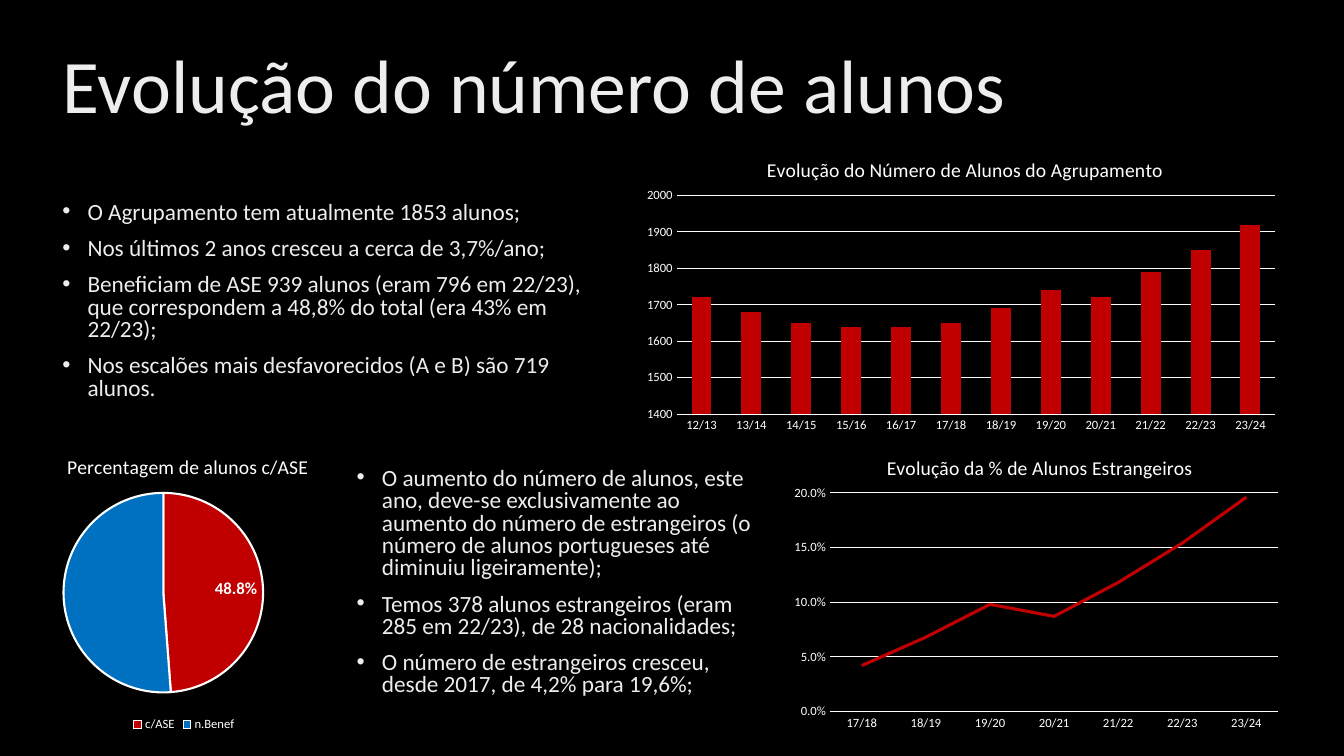
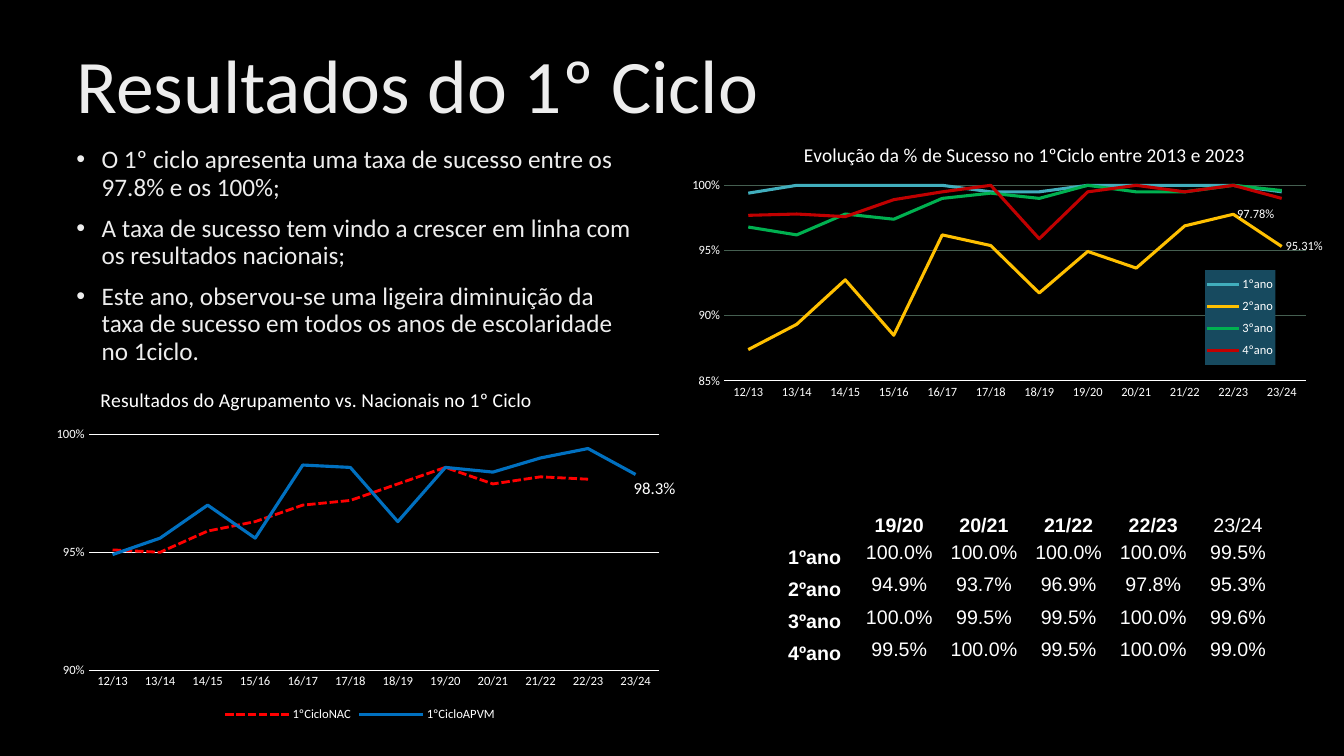
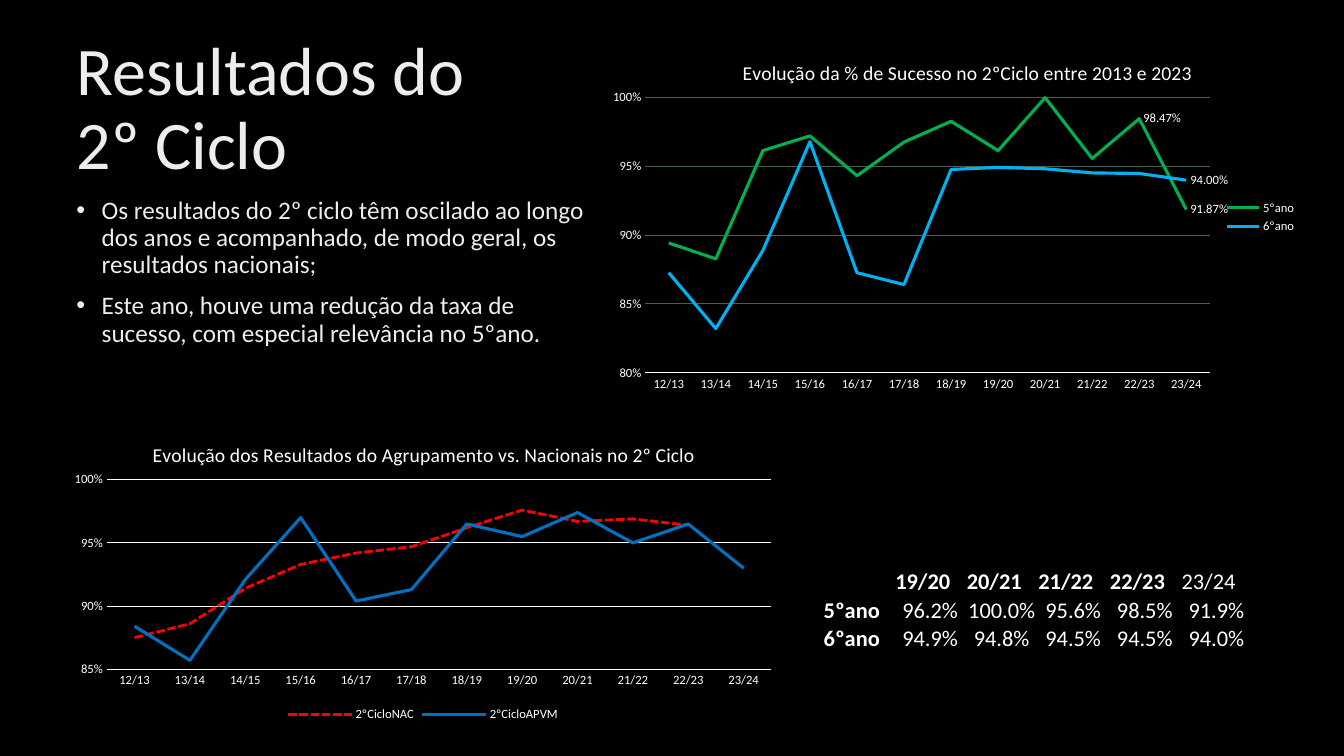
import pptx
import pptx.chart.data
import pptx.dml.color
import pptx.enum.chart
import pptx.enum.dml
import pptx.enum.text
import pptx.oxml
import pptx.oxml.ns
import pptx.util

Inches = pptx.util.Inches
Pt = pptx.util.Pt
RGBColor = pptx.dml.color.RGBColor
ChartType = pptx.enum.chart.XL_CHART_TYPE
LegendSide = pptx.enum.chart.XL_LEGEND_POSITION
LabelSide = pptx.enum.chart.XL_LABEL_POSITION
Anchor = pptx.enum.text.MSO_ANCHOR
Align = pptx.enum.text.PP_ALIGN
qn = pptx.oxml.ns.qn

BLACK = RGBColor(0x00, 0x00, 0x00)
WHITE = RGBColor(0xFF, 0xFF, 0xFF)
SILVER = RGBColor(0xED, 0xED, 0xED)
CRIMSON = RGBColor(0xC0, 0x00, 0x00)
RED = RGBColor(0xFF, 0x00, 0x00)
BLUE = RGBColor(0x00, 0x70, 0xC0)
SKY = RGBColor(0x00, 0xB0, 0xF0)
TEAL = RGBColor(0x41, 0xAE, 0xBD)
AMBER = RGBColor(0xFF, 0xC0, 0x00)
GREEN = RGBColor(0x00, 0xB0, 0x50)
MOSS = RGBColor(0x45, 0x5F, 0x51)
PETROL = RGBColor(0x17, 0x4A, 0x5F)

FONT = "Calibri"
NO_TABLE_STYLE = "{2D5ABB26-0587-4C30-8999-92F81FD0307C}"
YEARS = [f"{year}/{year + 1}" for year in range(12, 24)]


def style_font(font, size, color=WHITE, bold=False, name=FONT):
    font.size = Pt(size)
    font.name = name
    font.bold = bold
    font.color.rgb = color


def chart_xml(tag, attributes="", content=""):
    namespaces = pptx.oxml.ns.nsdecls("c", "a")
    return pptx.oxml.parse_xml(f"<c:{tag} {namespaces} {attributes}>{content}</c:{tag}>")


def add_slide(prs, title, box, size):
    slide = prs.slides.add_slide(prs.slide_layouts[5])
    heading = slide.shapes.title
    heading.left, heading.top, heading.width, heading.height = map(Inches, box)
    frame = heading.text_frame
    frame.text = title
    frame.word_wrap = True
    frame.auto_size = pptx.enum.text.MSO_AUTO_SIZE.NONE
    frame.vertical_anchor = Anchor.MIDDLE
    paragraph = frame.paragraphs[0]
    paragraph.alignment = Align.LEFT
    paragraph.line_spacing = 0.9
    style_font(paragraph.runs[0].font, size, SILVER)
    return slide


def add_bullets(slide, box, lines, size, spacing):
    frame = slide.shapes.add_textbox(*map(Inches, box)).text_frame
    frame.word_wrap = True
    frame.text = "\n".join(lines)
    for number, paragraph in enumerate(frame.paragraphs):
        properties = paragraph._p.get_or_add_pPr()
        properties.set("marL", str(Inches(0.25)))
        properties.set("indent", str(Inches(-0.25)))
        for tag, attribute, value in (("buFont", "typeface", "Arial"), ("buChar", "char", "•")):
            bullet = properties.makeelement(qn(f"a:{tag}"), {attribute: value})
            properties.append(bullet)
        paragraph.line_spacing = spacing
        if number:
            paragraph.space_before = Pt(10)
        style_font(paragraph.runs[0].font, size, SILVER)


def set_layout(parent, index, values, mode="", target=""):
    old = parent.find(qn("c:layout"))
    if old is not None:
        parent.remove(old)
    content = f'<c:layoutTarget val="{target}"/>' if target else ""
    if mode:
        content += f'<c:xMode val="{mode}"/><c:yMode val="{mode}"/>'
    content += "".join(f'<c:{key} val="{value:.4f}"/>' for key, value in zip("xywh", values))
    parent.insert(index, chart_xml("layout", "", f"<c:manualLayout>{content}</c:manualLayout>"))


def within(frame, box):
    left, top, width, height = frame
    parts = [(box[0] - left) / width, (box[1] - top) / height]
    if len(box) == 4:
        parts += [box[2] / width, box[3] / height]
    return parts


def add_chart(slide, kind, frame, title, title_at, plot, categories, series, legend=None,
              number_format="General"):
    data = pptx.chart.data.CategoryChartData(number_format=number_format)
    data.categories = categories
    for name, values in series:
        data.add_series(name, values)
    chart = slide.shapes.add_chart(kind, *map(Inches, frame), data).chart
    style_font(chart.font, 10)
    chart.has_title = True
    heading = chart.chart_title
    heading.text_frame.text = title
    style_font(heading.text_frame.paragraphs[0].runs[0].font, 14)
    set_layout(heading._element, 1, within(frame, title_at), "edge")
    plot_area = chart._chartSpace.find(".//" + qn("c:plotArea"))
    set_layout(plot_area, 0, within(frame, plot), "edge", "inner")
    chart.has_legend = legend is not None
    if legend is not None:
        chart.legend.position = legend
        chart.legend.include_in_layout = False
        style_font(chart.legend.font, 9)
    return chart


def style_axes(chart, low, high, step, number_format, grid=WHITE):
    for axis in (chart.category_axis, chart.value_axis):
        axis.major_tick_mark = axis.minor_tick_mark = pptx.enum.chart.XL_TICK_MARK.NONE
        style_font(axis.tick_labels.font, 9)
    chart.category_axis.format.line.color.rgb = WHITE
    chart.category_axis.format.line.width = Pt(0.75)
    values = chart.value_axis
    values.minimum_scale, values.maximum_scale, values.major_unit = low, high, step
    values.format.line.fill.background()
    values.has_major_gridlines = True
    values.major_gridlines.format.line.color.rgb = grid
    values.major_gridlines.format.line.width = Pt(0.75)
    values.tick_labels.number_format = number_format
    values.tick_labels.number_format_is_linked = False


def style_lines(chart, colors):
    chart.plots[0].vary_by_categories = False
    for series, color in zip(chart.plots[0].series, colors):
        series.smooth = False
        series.marker.style = pptx.enum.chart.XL_MARKER_STYLE.NONE
        series.format.line.color.rgb = color
        series.format.line.width = Pt(2.25)


def label_point(series, index, side, number_format, size=9, bold=False, offset=None):
    series.data_labels.show_value = False
    label = series.points[index].data_label
    label.position = side
    style_font(label.font, size, bold=bold)
    element = series._element.xpath(f"c:dLbls/c:dLbl[c:idx/@val='{index}']")[0]
    element.insert(1, chart_xml("numFmt", f'formatCode="{number_format}" sourceLinked="0"'))
    if offset:
        set_layout(element, 1, offset)


def add_success_chart(slide, frame, title, title_at, plot, series, colors, low, high, labels):
    chart = add_chart(slide, ChartType.LINE, frame, title, title_at, plot, YEARS, series,
                      LegendSide.RIGHT, "0.00%")
    style_axes(chart, low, high, 0.05, "0%", MOSS)
    style_lines(chart, colors)
    for number, point in labels:
        label_point(chart.plots[0].series[number], point, LabelSide.RIGHT, "0.00%")
    return chart


def add_national_chart(slide, frame, title, title_at, plot, cycle, national, school, low):
    series = [(f"{cycle}NAC", national + [None]), (f"{cycle}APVM", school)]
    chart = add_chart(slide, ChartType.LINE, frame, title, title_at, plot, YEARS, series,
                      LegendSide.BOTTOM, "0.0%")
    style_axes(chart, low, 1, 0.05, "0%")
    style_lines(chart, (RED, BLUE))
    line = chart.plots[0].series[0].format.line
    line.width = Pt(2)
    line.dash_style = pptx.enum.dml.MSO_LINE.SQUARE_DOT
    return chart


def place_legend(chart, frame, box, color):
    legend = chart.legend._element
    set_layout(legend, 1, within(frame, box), "edge")
    fill = f'<a:solidFill><a:srgbClr val="{color}"/></a:solidFill>'
    legend.find(qn("c:overlay")).addnext(chart_xml("spPr", "", fill))


def add_rates_table(slide, left, top, column, row, rates, size, font, heading_align):
    rows = [["", "19/20", "20/21", "21/22", "22/23", "23/24"]] + rates
    table = slide.shapes.add_table(len(rows), 6, Inches(left), Inches(top),
                                   Inches(column * 6), Inches(row * len(rows))).table
    table.first_row = table.horz_banding = False
    table._tbl.tblPr.find(qn("a:tableStyleId")).text = NO_TABLE_STYLE
    for r, texts in enumerate(rows):
        table.rows[r].height = Inches(row)
        for c, text in enumerate(texts):
            table.columns[c].width = Inches(column)
            cell = table.cell(r, c)
            cell.fill.background()
            cell.margin_left = cell.margin_right = cell.margin_top = Inches(0.01)
            cell.margin_bottom = 0
            is_heading = r == 0 or c == 0
            cell.vertical_anchor = Anchor.BOTTOM if is_heading else Anchor.MIDDLE
            cell.text_frame.text = text
            paragraph = cell.text_frame.paragraphs[0]
            paragraph.alignment = heading_align if is_heading else Align.CENTER
            paragraph._p.get_or_add_endParaRPr().set("sz", str(size * 100))
            for run in paragraph.runs:
                style_font(run.font, size, bold=is_heading and c < 5, name=font)


def build_students(prs):
    slide = add_slide(prs, "Evolução do número de alunos", (0.52, 0.16, 12.47, 1.45), 54)
    add_bullets(slide, (0.52, 1.96, 5.63, 2.13), [
        "O Agrupamento tem atualmente 1853 alunos;",
        "Nos últimos 2 anos cresceu a cerca de 3,7%/ano;",
        "Beneficiam de ASE 939 alunos (eram 796 em 22/23), que correspondem a 48,8% do total "
        "(era 43% em 22/23);",
        "Nos escalões mais desfavorecidos (A e B) são 719 alunos.",
    ], 16.6, 0.8)
    add_bullets(slide, (3.44, 4.6, 4.23, 2.55), [
        "O aumento do número de alunos, este ano, deve-se exclusivamente ao aumento do número de "
        "estrangeiros (o número de alunos portugueses até diminuiu ligeiramente);",
        "Temos 378 alunos estrangeiros (eram 285 em 22/23), de 28 nacionalidades;",
        "O número de estrangeiros cresceu, desde 2017, de 4,2% para 19,6%;",
    ], 16.6, 0.8)

    students = add_chart(
        slide, ChartType.COLUMN_CLUSTERED, (6.29, 1.36, 6.49, 3),
        "Evolução do Número de Alunos do Agrupamento", (7.57, 1.52), (6.71, 1.94, 5.94, 2.17),
        YEARS, [("Alunos", [1720, 1680, 1650, 1640, 1640, 1650, 1690, 1740, 1720, 1790, 1850, 1920])])
    style_axes(students, 1400, 2000, 100, "General")
    bars = students.plots[0]
    bars.gap_width = 150
    bars.vary_by_categories = False
    bars.series[0].format.fill.solid()
    bars.series[0].format.fill.fore_color.rgb = CRIMSON

    foreign = add_chart(
        slide, ChartType.LINE, (7.78, 4.31, 5, 3),
        "Evolução da % de Alunos Estrangeiros", (8.76, 4.47), (8.23, 4.89, 4.45, 2.17),
        YEARS[5:], [("Estrangeiros", [0.042, 0.068, 0.098, 0.087, 0.118, 0.154, 0.196])],
        number_format="0.0%")
    style_axes(foreign, 0, 0.2, 0.05, "0.0%")
    style_lines(foreign, [CRIMSON])

    support = add_chart(
        slide, ChartType.PIE, (0.03, 4.3, 3.59, 3),
        "Percentagem de alunos c/ASE", (0.63, 4.46), (0.63, 4.89, 1.98, 1.98),
        ["c/ASE", "n.Benef"], [("ASE", [0.488, 0.512])], LegendSide.BOTTOM, "0.0%")
    shares = support.plots[0].series[0]
    for number, color in enumerate((CRIMSON, BLUE)):
        look = shares.points[number].format
        look.fill.solid()
        look.fill.fore_color.rgb = color
        look.line.color.rgb = WHITE
        look.line.width = Pt(1.5)
    label_point(shares, 0, LabelSide.INSIDE_END, "0.0%", 12, True)


def build_first_cycle(prs):
    slide = add_slide(prs, "Resultados do 1º Ciclo", (0.66, 0.3, 11.5, 1.17), 54)
    add_bullets(slide, (0.66, 1.41, 5.78, 2.4), [
        "O 1º ciclo apresenta uma taxa de sucesso entre os 97.8% e os 100%;",
        "A taxa de sucesso tem vindo a crescer em linha com os resultados nacionais;",
        "Este ano, observou-se uma ligeira diminuição da taxa de sucesso em todos os anos de "
        "escolaridade no 1ciclo.",
    ], 18, 0.9)
    add_rates_table(slide, 7.66, 5, 0.84, 0.32, [
        ["1ºano", "100.0%", "100.0%", "100.0%", "100.0%", "99.5%"],
        ["2ºano", "94.9%", "93.7%", "96.9%", "97.8%", "95.3%"],
        ["3ºano", "100.0%", "99.5%", "99.5%", "100.0%", "99.6%"],
        ["4ºano", "99.5%", "100.0%", "99.5%", "100.0%", "99.0%"],
    ], 14, "Arial", Align.CENTER)

    frame = (6.7, 1.2, 6.42, 2.91)
    success = add_success_chart(
        slide, frame, "Evolução da % de Sucesso no 1ºCiclo entre 2013 e 2023",
        (7.96, 1.37), (7.19, 1.71, 5.88, 2.07), [
            ("1ºano", [0.994, 1, 1, 1, 1, 0.995, 0.995, 1, 1, 1, 1, 0.995]),
            ("2ºano", [0.874, 0.8934, 0.9275, 0.885, 0.962, 0.9538, 0.9174, 0.9493, 0.9365,
                       0.9689, 0.9778, 0.9531]),
            ("3ºano", [0.968, 0.962, 0.978, 0.974, 0.99, 0.994, 0.99, 1, 0.995, 0.995, 1, 0.996]),
            ("4ºano", [0.977, 0.978, 0.976, 0.989, 0.995, 1, 0.959, 0.995, 1, 0.995, 1, 0.99]),
        ], (TEAL, AMBER, GREEN, CRIMSON), 0.85, 1.01, [(1, 10), (1, 11)])
    place_legend(success, frame, (12.05, 2.68, 0.71, 0.94), PETROL)

    national = add_national_chart(
        slide, (0.44, 3.7, 6.26, 3.5), "Resultados do Agrupamento vs. Nacionais no 1º Ciclo",
        (0.96, 3.8), (0.88, 4.31, 5.66, 2.34), "1ºCiclo",
        [0.951, 0.95, 0.959, 0.963, 0.97, 0.972, 0.979, 0.986, 0.979, 0.982, 0.981],
        [0.949, 0.956, 0.97, 0.956, 0.987, 0.986, 0.963, 0.986, 0.984, 0.99, 0.994, 0.983], 0.9)
    label_point(national.plots[0].series[1], 11, LabelSide.BELOW, "0.0%", 12, offset=(0.03, 0))


def build_second_cycle(prs):
    slide = add_slide(prs, "Resultados do 2º Ciclo", (0.66, 0.51, 4.49, 1.17), 48.6)
    add_bullets(slide, (0.66, 1.91, 5.28, 1.8), [
        "Os resultados do 2º ciclo têm oscilado ao longo dos anos e acompanhado, de modo geral, "
        "os resultados nacionais;",
        "Este ano, houve uma redução da taxa de sucesso, com especial relevância no 5ºano.",
    ], 18, 0.9)
    add_rates_table(slide, 8.16, 5.63, 0.71, 0.28, [
        ["5ºano", "96.2%", "100.0%", "95.6%", "98.5%", "91.9%"],
        ["6ºano", "94.9%", "94.8%", "94.5%", "94.5%", "94.0%"],
    ], 16, FONT, Align.LEFT)
    add_success_chart(
        slide, (5.93, 0.35, 7.03, 3.61), "Evolução da % de Sucesso no 2ºCiclo entre 2013 e 2023",
        (7.33, 0.55), (6.4, 0.97, 5.6, 2.73), [
            ("5ºano", [0.8943, 0.8828, 0.9615, 0.9722, 0.9432, 0.9677, 0.9828, 0.9615, 1,
                       0.9558, 0.9847, 0.9187]),
            ("6ºano", [0.8727, 0.8321, 0.8889, 0.968, 0.8727, 0.8641, 0.9478, 0.9493, 0.9483,
                       0.9453, 0.9449, 0.94]),
        ], (GREEN, SKY), 0.8, 1, [(0, 10), (0, 11), (1, 11)])
    add_national_chart(
        slide, (0.6, 4.18, 7.19, 3.02),
        "Evolução dos Resultados do Agrupamento vs. Nacionais no 2º Ciclo",
        (1.48, 4.34), (1.06, 4.76, 6.59, 1.88), "2ºCiclo",
        [0.875, 0.886, 0.914, 0.933, 0.942, 0.947, 0.962, 0.976, 0.967, 0.969, 0.964],
        [0.884, 0.857, 0.921, 0.97, 0.904, 0.913, 0.965, 0.955, 0.974, 0.95, 0.965, 0.93], 0.85)


def main():
    prs = pptx.Presentation()
    prs.slide_width, prs.slide_height = Inches(13.33), Inches(7.5)
    background = prs.slide_master.background.fill
    background.solid()
    background.fore_color.rgb = BLACK
    build_students(prs)
    build_first_cycle(prs)
    build_second_cycle(prs)
    prs.save("out.pptx")


if __name__ == "__main__":
    main()
